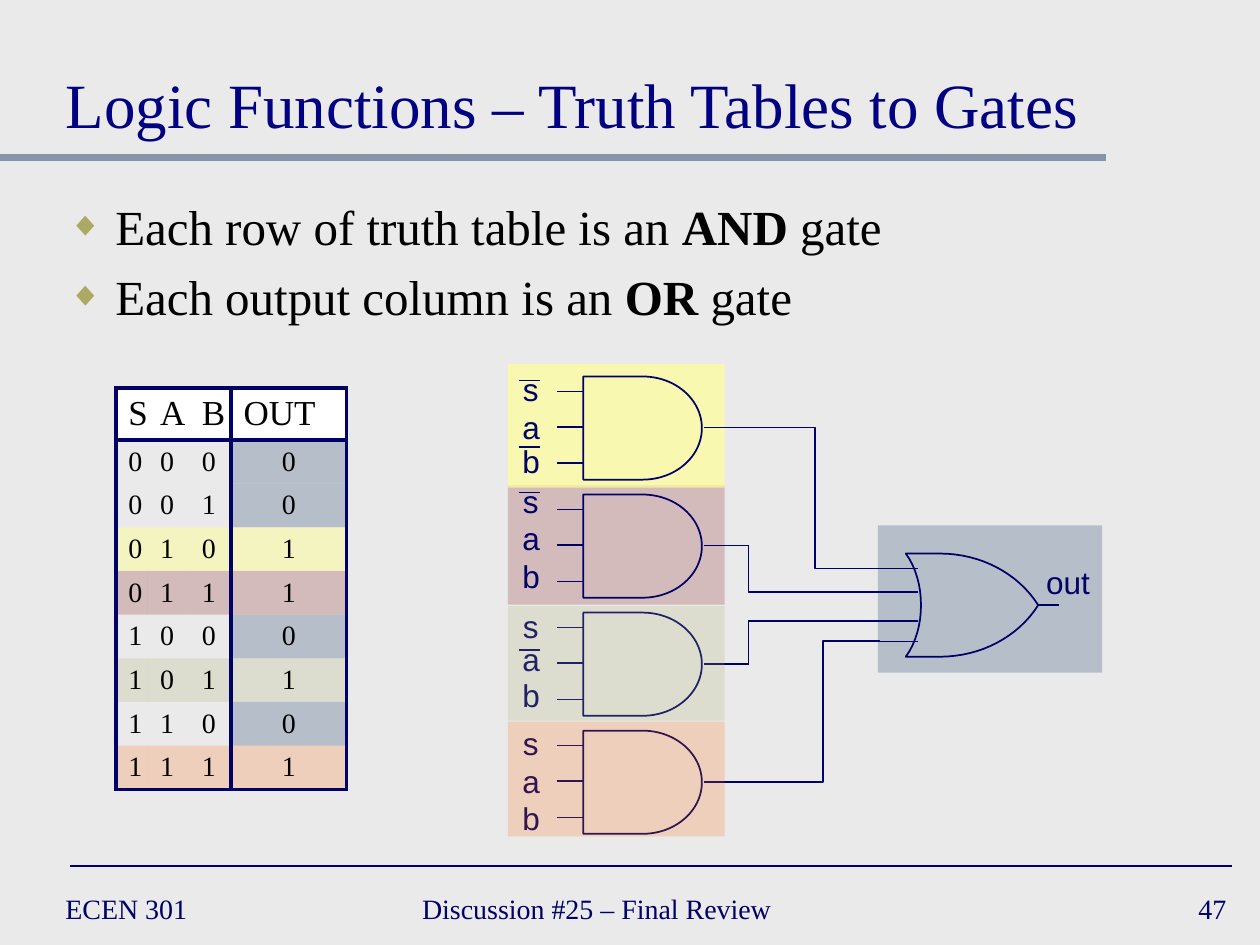
from pptx import Presentation
from pptx.dml.color import RGBColor
from pptx.enum import shapes, text
from pptx.oxml import ns, xmlchemy
from pptx.util import Cm, Pt

NAVY, SLATE, OLIVE = "000066", "8495A9", "ACA964"
YELLOW, MAROON, ORANGE = "FFFF99", "800000", "FF6600"
SERIF, SANS = "Times New Roman", "Arial"


def rgb(code):
    return RGBColor.from_string(code)


def node(tag, **attrs):
    item = xmlchemy.OxmlElement(tag)
    for key, value in attrs.items():
        item.set(key, str(value))
    return item


def tint(fill, owner, code, alpha):
    """Solid fill with an opacity in percent."""
    fill.solid()
    fill.fore_color.rgb = rgb(code)
    owner.find(".//" + ns.qn("a:srgbClr")).append(node("a:alpha", val=alpha * 1000))


def style(font, size, code, name=SERIF):
    font.size, font.name = Pt(size), name
    font.color.rgb = rgb(code)


def place(shape, x, y, w, h):
    shape.left, shape.top, shape.width, shape.height = Cm(x), Cm(y), Cm(w), Cm(h)


def line(slide, x1, y1, x2, y2, code=NAVY, width=1):
    link = slide.shapes.add_connector(
        shapes.MSO_CONNECTOR.STRAIGHT, Cm(x1), Cm(y1), Cm(x2), Cm(y2))
    link.line.color.rgb = rgb(code)
    link.line.width = Pt(width)
    link.element.spPr.append(node("a:effectLst"))


def outline(shape):
    shape.shadow.inherit = False
    shape.fill.background()
    shape.line.color.rgb = rgb(NAVY)
    shape.line.width = Pt(1)


def trace(slide, points, close=False):
    spots = [(Cm(x), Cm(y)) for x, y in points]
    pen = slide.shapes.build_freeform(*spots[0])
    pen.add_line_segments(spots[1:], close=close)
    outline(pen.convert_to_shape())


def curve(a, b, c, d, steps=16):
    """Points along a cubic curve."""
    for i in range(steps + 1):
        t = i / steps
        s = 1 - t
        yield tuple(s**3 * p + 3 * s * s * t * q + 3 * s * t * t * r + t**3 * e
                    for p, q, r, e in zip(a, b, c, d))


def label(slide, words, x, y, w, h, size, name, align):
    box = slide.shapes.add_textbox(Cm(x), Cm(y), Cm(w), Cm(h))
    frame = box.text_frame
    frame.word_wrap = False
    frame.text = words
    para = frame.paragraphs[0]
    para.alignment = align
    style(para.runs[0].font, size, NAVY, name)
    return frame


def band(slide, x, y, w, h, code, alpha):
    box = slide.shapes.add_shape(shapes.MSO_SHAPE.RECTANGLE, Cm(x), Cm(y), Cm(w), Cm(h))
    box.shadow.inherit = False
    box.line.fill.background()
    tint(box.fill, box.element, code, alpha)


def header(slide, x, y, w):
    title = slide.shapes.title
    place(title, x, y, w, 2.54)
    frame = title.text_frame
    frame.text = "Logic Functions – Truth Tables to Gates"
    frame.auto_size = text.MSO_AUTO_SIZE.NONE
    frame.vertical_anchor = text.MSO_ANCHOR.BOTTOM
    para = frame.paragraphs[0]
    para.alignment = text.PP_ALIGN.LEFT
    style(para.runs[0].font, 36, "000080")
    line(slide, 0, y + 2.75, 22.3, y + 2.75, SLATE, 4)


def points(slide, x, y, w, h):
    body = slide.placeholders[1]
    place(body, x, y, w, h)
    frame = body.text_frame
    frame.auto_size = text.MSO_AUTO_SIZE.NONE
    rows = [("Each row of truth table is an ", "AND", " gate"),
            ("Each output column is an ", "OR", " gate")]
    for i, row in enumerate(rows):
        para = frame.add_paragraph() if i else frame.paragraphs[0]
        props = para._p.get_or_add_pPr()
        props.set("marL", str(Cm(0.95)))
        props.set("indent", str(Cm(-0.95)))
        hue = node("a:buClr")
        hue.append(node("a:srgbClr", val=OLIVE))
        for part in (hue, node("a:buSzPct", val=70000), node("a:buChar", char="◆")):
            props.append(part)
        para.space_before = Pt(6.5 if i else 0)
        for j, words in enumerate(row):
            run = para.add_run()
            run.text = words
            run.font.bold = j == 1
            style(run.font, 28, "000000")


def edges(cell, sides):
    props = cell._tc.get_or_add_tcPr()
    for i, side in enumerate("LRTB"):
        rule = node(f"a:ln{side}", w=Pt(2.25))
        if side in sides:
            rule.append(node("a:solidFill"))
            rule[0].append(node("a:srgbClr", val=NAVY))
        else:
            rule.append(node("a:noFill"))
        props.insert(i, rule)


def truth(slide, x, y):
    hues = {3: (YELLOW, 50), 4: (MAROON, 20), 6: (OLIVE, 20), 8: (ORANGE, 20)}
    rows = [("S", "A", "B", "OUT")]
    rows += [(*f"{i:03b}", str(int(i + 1 in hues))) for i in range(8)]
    widths = (0.64, 0.84, 0.84, 2.33)
    grid = slide.shapes.add_table(9, 4, Cm(x), Cm(y), Cm(sum(widths)), Cm(8.09)).table
    grid.first_row = grid.horz_banding = False
    for col, width in zip(grid.columns, widths):
        col.width = Cm(width)
    for r, row in enumerate(rows):
        grid.rows[r].height = Cm(0.88 if r else 1.05)
        for c, words in enumerate(row):
            cell = grid.cell(r, c)
            cell.text = words
            cell.vertical_anchor = text.MSO_ANCHOR.MIDDLE
            cell.margin_top = cell.margin_bottom = Cm(0.1)
            cell.margin_left, cell.margin_right = Cm(0.25), Cm(0.25 if c == 3 else 0)
            para = cell.text_frame.paragraphs[0]
            para.alignment = text.PP_ALIGN.CENTER if r and c == 3 else text.PP_ALIGN.LEFT
            style(para.runs[0].font, 16 if r else 20, "000000")
            hue = ("FFFFFF", 100) if r == 0 else hues.get(r, (SLATE, 50) if c == 3 else None)
            if hue:
                tint(cell.fill, cell._tc.tcPr, *hue)
            else:
                cell.fill.background()
            edges(cell, "L" * (c in (0, 3)) + "R" * (c in (2, 3))
                  + "T" * (r in (0, 1)) + "B" * (r in (0, 8)))


def gate(slide, x, y, drops, barred):
    """AND gate with three named inputs."""
    outline(slide.shapes.add_shape(
        shapes.MSO_SHAPE.FLOWCHART_DELAY, Cm(x), Cm(y), Cm(2.39), Cm(2.08)))
    for pin in (0.3, 1.02, 1.75):
        line(slide, x - 0.53, y + pin, x, y + pin)
    line(slide, x + 2.44, y + 1.03, x + 3.33, y + 1.03)
    for name, drop in zip("sab", drops):
        label(slide, name, x - 1.48, y + drop, 0.84, 1.02, 18, SANS, text.PP_ALIGN.CENTER)
        if name in barred:
            bar = y + drop + (0.23 if name == "b" else 0.33)
            line(slide, x - 1.3, bar, x - 0.87, bar)


def merge(slide, x, y, pins):
    """OR gate on its panel."""
    band(slide, x, y, 4.52, 2.97, SLATE, 50)
    nose = [*curve((1.25, 0.57), (2.06, 0.57), (2.82, 0.96), (3.23, 1.61))]
    chin = [(px, 3.22 - py) for px, py in reversed(nose)]
    back = curve((0.56, 2.65), (0.97, 2.1), (0.97, 1.12), (0.56, 0.57))
    trace(slide, [(x + px, y + py) for px, py in (*nose, *chin, *back)], close=True)
    for pin in pins:
        line(slide, x - 0.07, y + pin, x + 0.8, y + pin)
    line(slide, x + 3.23, y + 1.6, x + 3.64, y + 1.6)
    label(slide, "out", x + 3.13, y + 0.64, 1.4, 1.02, 18, SANS, text.PP_ALIGN.CENTER)


def circuit(slide, x, y):
    pins = (0.87, 1.35, 1.93, 2.34)
    bends = (6.19, 4.85, 4.85, 6.35)
    drops = [(-0.25, 0.51, 1.19), (-0.37, 0.37, 1.13),
             (-0.23, 0.43, 1.16), (-0.25, 0.51, 1.25)]
    # Lower two bands lie over their gates
    band(slide, x, y + 2.44, 4.37, 2.41, MAROON, 20)
    band(slide, x, y, 4.37, 2.49, YELLOW, 70)
    merge(slide, x + 7.46, y + 3.25, pins)
    for i, barred in enumerate(("sb", "s", "a", "")):
        top = y + 0.25 + 2.38 * i
        gate(slide, x + 1.52, top, drops[i], barred)
        start, end, bend = top + 1.03, y + 3.25 + pins[i], x + bends[i]
        trace(slide, [(x + 4.85, start), (bend, start), (bend, end), (x + 7.51, end)])
    band(slide, x, y + 4.88, 4.37, 2.31, OLIVE, 20)
    band(slide, x, y + 7.21, 4.37, 2.31, ORANGE, 20)


def footer(slide, y):
    line(slide, 1.42, y, 24.84, y)
    left, right = text.PP_ALIGN.LEFT, text.PP_ALIGN.RIGHT
    for words, x, w, align in (("ECEN 301", 1.07, 5.51, left),
                               ("Discussion #25 – Final Review", 8.26, 9.73, left),
                               ("47", 19.69, 5.28, right)):
        frame = label(slide, words, x, y + 0.32, w, 1.07, 16, SERIF, align)
        frame.word_wrap = True
        frame.vertical_anchor = text.MSO_ANCHOR.MIDDLE


def main():
    deck = Presentation()
    deck.slide_width, deck.slide_height = Cm(25.4), Cm(19.05)
    slide = deck.slides.add_slide(deck.slide_layouts[1])
    back = slide.background.fill
    back.solid()
    back.fore_color.rgb = rgb("EAEAEA")
    header(slide, 1.07, 0.43, 23.29)
    points(slide, 1.12, 3.83, 23.22, 3.8)
    truth(slide, 2.34, 7.82)
    circuit(slide, 10.24, 7.34)
    footer(slide, 17.46)
    deck.save("out.pptx")


if __name__ == "__main__":
    main()
